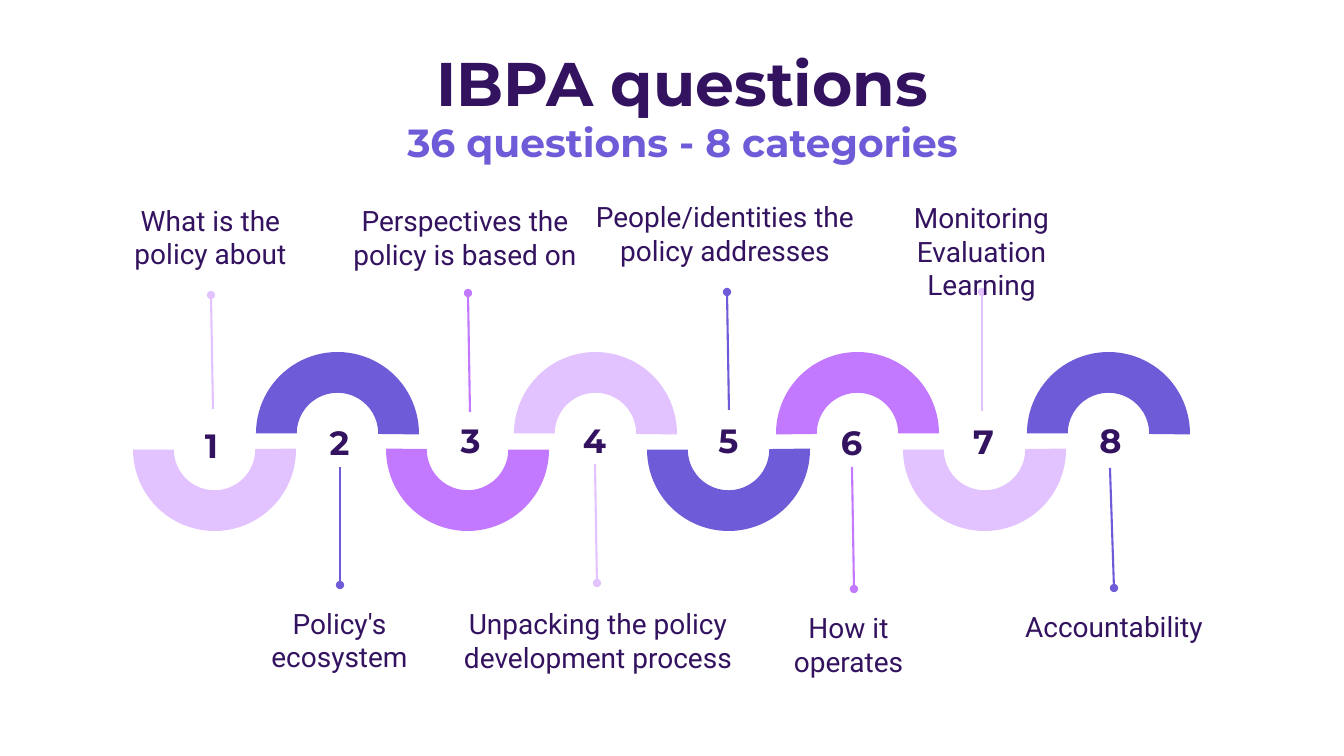
from lxml import etree
from pptx import Presentation
from pptx import util as u
from pptx.dml.color import RGBColor
from pptx.enum import shapes, text
from pptx.oxml.ns import qn

PX = 12192000 / 1344
DARK, BLUE, PINK, PALE = "331360", "6D5BD8", "C279FF", "E3C3FF"


def px(*vals):
    return [u.Emu(round(v * PX)) for v in vals]


def write(para, words, size, face, color, bold=False):
    para.alignment = text.PP_ALIGN.CENTER
    run = para.add_run()
    run.text = words
    font = run.font
    font.size, font.name, font.bold = u.Pt(size), face, bold
    font.color.rgb = RGBColor.from_string(color)


prs = Presentation()
prs.slide_width, prs.slide_height = px(1344, 756)
slide = prs.slides.add_slide(prs.slide_layouts[5])

# Title
title = slide.shapes.title
title.left, title.top, title.width, title.height = px(71, 39, 1223, 132)
frame = title.text_frame
frame.vertical_anchor = text.MSO_ANCHOR.MIDDLE
write(frame.paragraphs[0], "IBPA questions", 44, "Montserrat", DARK, True)
write(frame.add_paragraph(), "36 questions - 8 categories", 28, "Montserrat", BLUE, True)

# Steps: label lines, label box, color, arc left, flip, number corner, pin from dot to number
steps = [
    (["What is the policy about"], (113, 182, 195, 110),
     PALE, 133, False, (174, 415), (211, 295, 213, 409)),
    (["Policy's ecosystem"], (250, 589, 179, 102),
     BLUE, 256, True, (302, 412), (340, 585, 340, 467)),
    (["Perspectives the policy is based on"], (336, 182, 258, 111),
     PINK, 386, True, (433, 410), (468, 293, 470, 412)),
    (["Unpacking the policy development process"], (453, 560, 290, 161),
     PALE, 514, True, (557, 410), (597, 583, 595, 464)),
    (["People/identities the policy addresses"], (575, 182, 300, 103),
     BLUE, 647, False, (691, 410), (727, 292, 729, 410)),
    (["How it operates"], (759, 606, 179, 76),
     PINK, 776, False, (814, 412), (854, 589, 852, 467)),
    (["Monitoring", "Evaluation", "Learning"], (896, 182, 171, 138),
     PALE, 903, False, (946, 411), (982, 292, 982, 411)),
    (["Accountability"], (1010, 588, 208, 76),
     BLUE, 1027, True, (1073, 410), (1114, 588, 1110, 468)),
]

for num, (lines, area, color, left, flip, spot, ends) in enumerate(steps, 1):
    # Half ring: odd steps hang down, even steps arch up
    odd = num % 2
    arc = slide.shapes.add_shape(
        shapes.MSO_SHAPE.BLOCK_ARC, *px(left, 368 if odd else 352, 163, 163))
    for i, val in enumerate((107.6, 0, 0.25)):
        arc.adjustments[i] = val
    arc.rotation = 180 if odd else 0
    if flip:
        arc._element.spPr.find(qn("a:xfrm")).set("flipH", "1")
    arc.shadow.inherit = False
    arc.fill.solid()
    arc.fill.fore_color.rgb = RGBColor.from_string(color)
    arc.line.fill.background()

    # Pin with a dot at its outer end
    pin = slide.shapes.add_connector(shapes.MSO_CONNECTOR.STRAIGHT, *px(*ends))
    pin.line.color.rgb = RGBColor.from_string(color)
    pin.line.width = u.Pt(1.5)
    etree.SubElement(pin.line._get_or_add_ln(), qn("a:headEnd"), type="oval")
    etree.SubElement(pin._element.spPr, qn("a:effectLst"))

    # Number and label
    for rows, box, size, face, bold, anchor in (
            ([str(num)], (*spot, 75, 54), 24, "Montserrat", True, text.MSO_ANCHOR.TOP),
            (lines, area, 20, "Roboto", False, text.MSO_ANCHOR.MIDDLE)):
        frame = slide.shapes.add_textbox(*px(*box)).text_frame
        frame.word_wrap = True
        frame.vertical_anchor = anchor
        frame.margin_left, frame.margin_right, frame.margin_top, frame.margin_bottom = px(10, 10, 10, 10)
        for i, row in enumerate(rows):
            para = frame.add_paragraph() if i else frame.paragraphs[0]
            write(para, row, size, face, DARK, bold)

prs.save("out.pptx")
